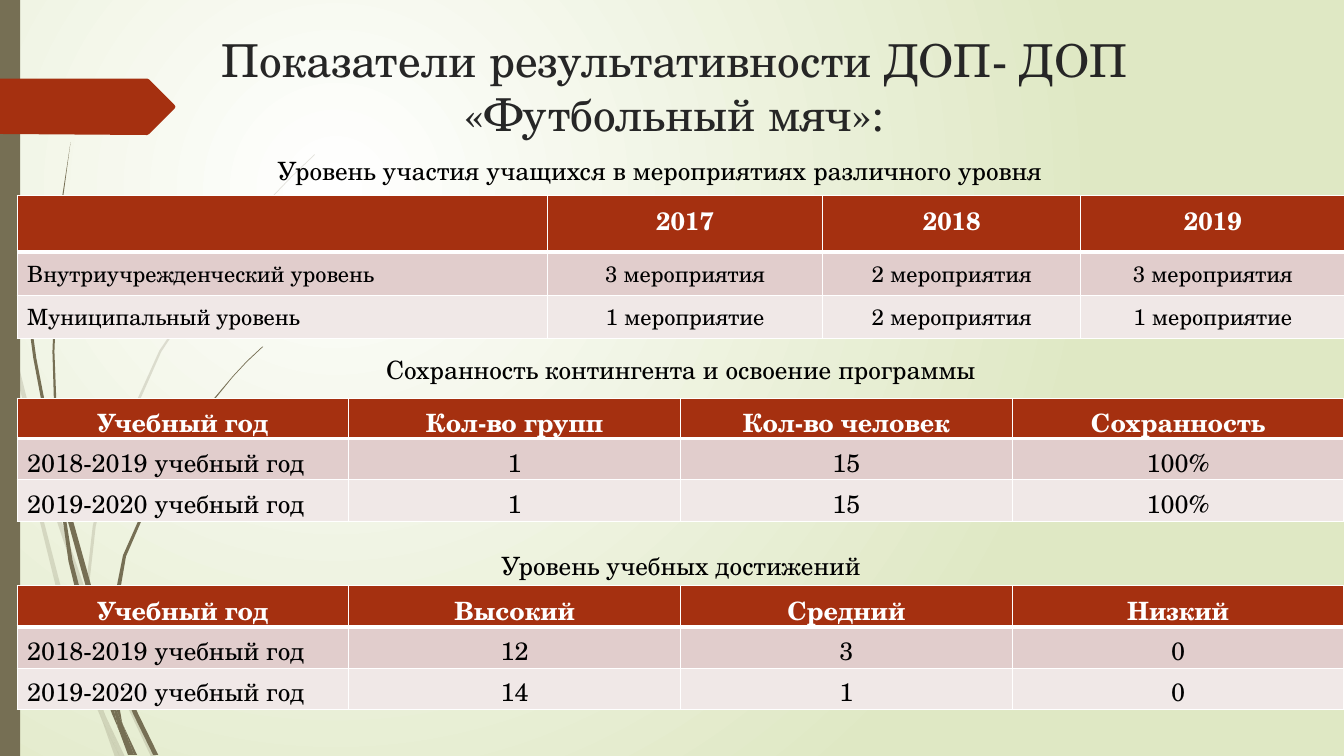
from dataclasses import dataclass

from lxml import etree
from pptx import Presentation
from pptx.dml.color import RGBColor
from pptx.enum import shapes, text
from pptx.oxml import parse_xml
from pptx.oxml.ns import qn
from pptx.util import Pt

PX = 9144
DRAWING = "http://schemas.openxmlformats.org/drawingml/2006/main"
PRESENTATION = "http://schemas.openxmlformats.org/presentationml/2006/main"


@dataclass(frozen=True)
class Theme:
    font: str = "TeX Gyre Schola"
    olive: str = "766F54"
    rust: str = "A53010"
    ink: str = "000000"
    title_ink: str = "262626"
    white: str = "FFFFFF"
    meadow: str = "DFE8C4"
    bands: tuple = ("E1CDCC", "F0E8E7")
    title_size: float = 32.4
    body_size: int = 18
    small_size: int = 16


THEME = Theme()

PALE_GRASS = [
    [(11, 350), (9, 322), (0, 282), (0, 299), (10, 344)],
    [(58, 522), (84, 599), (85, 586), (62, 520), (36, 433), (14, 345), (17, 376), (36, 449)],
    [(92, 607), (88, 596), (88, 610), (123, 694), (150, 751), (155, 751), (127, 692)],
    [(119, 751), (124, 751), (105, 711)],
    [(93, 683), (70, 619), (31, 469), (17, 376), (11, 350), (28, 470), (65, 621),
     (92, 693), (101, 714), (99, 707)],
    [(84, 599), (87, 646), (93, 683), (96, 692), (105, 711), (103, 706), (91, 646),
     (88, 610), (88, 608)],
    [(88, 584), (95, 522), (110, 462), (160, 349), (229, 245), (268, 198), (290, 175),
     (312, 154), (312, 153), (289, 175), (268, 197), (228, 244), (158, 348), (107, 461),
     (92, 522), (85, 584), (85, 586), (88, 596)],
    [(101, 714), (114, 751), (119, 751)],
    [(88, 608), (88, 610), (88, 596), (85, 586), (84, 599)],
    [(96, 692), (93, 683), (99, 707), (101, 714), (119, 751), (105, 711)],
]
DARK_GRASS = [
    [(7, 110), (17, 233), (33, 355), (56, 477), (57, 481), (55, 457), (55, 453), (36, 355),
     (19, 232), (8, 109), (5, 48), (4, 0), (3, 0), (4, 48)],
    [(88, 592), (106, 645), (106, 633), (106, 631), (93, 590), (60, 472), (64, 505)],
    [(113, 649), (110, 641), (111, 656), (132, 708), (152, 749), (157, 749), (136, 706)],
    [(110, 691), (98, 657), (72, 556), (64, 505), (57, 477), (68, 557), (93, 659),
     (111, 708), (117, 722), (116, 717)],
    [(60, 472), (58, 453), (54, 349), (58, 245), (63, 193), (70, 141), (62, 193),
     (56, 245), (52, 349), (55, 449)],
    [(133, 749), (136, 749), (122, 719)],
    [(57, 477), (64, 505), (60, 472), (55, 449), (55, 453)],
    [(111, 633), (125, 552), (158, 476), (205, 406), (231, 374), (245, 359), (261, 344),
     (260, 344), (245, 358), (231, 373), (204, 405), (156, 474), (122, 551), (106, 631),
     (110, 641)],
    [(117, 722), (127, 749), (131, 749)],
    [(106, 645), (110, 691), (116, 706), (122, 719), (121, 716), (111, 656), (109, 651)],
    [(106, 645), (109, 651), (111, 656), (110, 641), (106, 631)],
    [(116, 706), (110, 691), (116, 717), (117, 722), (130, 749), (133, 749), (122, 719)],
]
ARROW = [(173, 108), (148, 133), (146, 134), (0, 133), (0, 78), (146, 78), (148, 79),
         (173, 104), (174, 106)]

EVENTS = [
    ["", "2017", "2018", "2019"],
    ["Внутриучрежденческий уровень", "3 мероприятия", "2 мероприятия", "3 мероприятия"],
    ["Муниципальный уровень", "1 мероприятие", "2 мероприятия", "1 мероприятие"],
]
RETENTION = [
    ["Учебный год", "Кол-во групп", "Кол-во человек", "Сохранность"],
    ["2018-2019 учебный год", "1", "15", "100%"],
    ["2019-2020 учебный год", "1", "15", "100%"],
]
ACHIEVEMENT = [
    ["Учебный год", "Высокий", "Средний", "Низкий"],
    ["2018-2019 учебный год", "12", "3", "0"],
    ["2019-2020 учебный год", "14", "1", "0"],
]


def emu(*lengths):
    return [length * PX for length in lengths]


def paint(shape, color, opacity=100):
    shape.shadow.inherit = False
    shape.line.fill.background()
    shape.fill.solid()
    shape.fill.fore_color.rgb = RGBColor.from_string(color)
    if opacity < 100:
        fill = shape.fill._xPr.find(qn("a:solidFill"))
        etree.SubElement(fill[0], qn("a:alpha"), val=str(opacity * 1000))


def write(frame, words, *, size=THEME.body_size, color=THEME.ink, bold=False, centered=True):
    para = frame.paragraphs[0]
    para.text = words
    para.alignment = text.PP_ALIGN.CENTER if centered else text.PP_ALIGN.LEFT
    for span in para.runs:
        span.font.name = THEME.font
        span.font.size = Pt(size)
        span.font.bold = bold
        span.font.color.rgb = RGBColor.from_string(color)


def add_text(page, box, words, **style):
    frame = page.shapes.add_textbox(*emu(*box)).text_frame
    frame.word_wrap = True
    write(frame, words, **style)


def add_outline(page, points, color, opacity=100):
    builder = page.shapes.build_freeform(*points[0], scale=PX)
    builder.add_line_segments(points[1:], close=True)
    paint(builder.convert_to_shape(), color, opacity)


def add_background(page):
    background = parse_xml(
        f'<p:bg xmlns:p="{PRESENTATION}" xmlns:a="{DRAWING}"><p:bgPr>'
        f'<a:gradFill rotWithShape="1"><a:gsLst>'
        f'<a:gs pos="0"><a:srgbClr val="{THEME.white}"/></a:gs>'
        f'<a:gs pos="100000"><a:srgbClr val="{THEME.meadow}"/></a:gs></a:gsLst>'
        '<a:path path="circle"><a:fillToRect l="50000" t="50000" r="100000" b="100000"/></a:path>'
        '</a:gradFill><a:effectLst/></p:bgPr></p:bg>')
    page._element.cSld.insert(0, background)


def add_decor(page, box):
    for blade in PALE_GRASS:
        add_outline(page, blade, THEME.olive, 20)
    for blade in DARK_GRASS:
        add_outline(page, blade, THEME.olive)
    stripe = page.shapes.add_shape(shapes.MSO_SHAPE.RECTANGLE, *emu(*box))
    paint(stripe, THEME.olive)
    add_outline(page, ARROW, THEME.rust)


def add_borders(cell, bottom):
    properties = cell._tc.get_or_add_tcPr()
    for index, (side, points) in enumerate(zip("LRTB", (1, 1, 1, bottom))):
        properties.insert(index, parse_xml(
            f'<a:ln{side} xmlns:a="{DRAWING}" w="{points * 12700}"><a:solidFill>'
            f'<a:srgbClr val="{THEME.white}"/></a:solidFill></a:ln{side}>'))


def add_results(page, box, rows, widths, heights, body_size=THEME.body_size):
    table = page.shapes.add_table(len(rows), len(widths), *emu(*box)).table
    for column, width in zip(table.columns, widths):
        column.width = width * PX
    for row, height in zip(table.rows, heights):
        row.height = height * PX
    for r, values in enumerate(rows):
        header = r == 0
        fill = THEME.rust if header else THEME.bands[(r - 1) % 2]
        for c, value in enumerate(values):
            cell = table.cell(r, c)
            cell.fill.solid()
            cell.fill.fore_color.rgb = RGBColor.from_string(fill)
            add_borders(cell, 3 if header else 1)
            write(cell.text_frame, value, bold=header, centered=header or c > 0,
                  size=THEME.body_size if header else body_size,
                  color=THEME.white if header else THEME.ink)


def main():
    deck = Presentation()
    deck.slide_width, deck.slide_height = emu(1333, 750)
    page = deck.slides.add_slide(deck.slide_layouts[6])
    left, width = 17, 1317
    quarters = [width // 4] * 4
    add_background(page)
    add_decor(page, (0, 0, 20, 750))
    add_text(page, (left, 27, width, 109),
             "Показатели результативности ДОП- ДОП \v«Футбольный мяч»: ",
             size=THEME.title_size, color=THEME.title_ink)
    add_results(page, (left, 194, width, 133), EVENTS, [526, 273, 256, 262], [56, 43, 43],
                THEME.small_size)
    add_text(page, (left, 149, width, 40),
             "Уровень участия учащихся в мероприятиях различного уровня\t")
    add_text(page, (left, 347, width, 40), "Сохранность контингента и освоение программы")
    add_results(page, (left, 395, width, 121), RETENTION, quarters, [39, 41, 41])
    add_text(page, (left, 541, width, 40), "Уровень учебных достижений")
    add_results(page, (left, 581, width, 123), ACHIEVEMENT, quarters, [41, 41, 41])
    deck.save("out.pptx")


if __name__ == "__main__":
    main()
